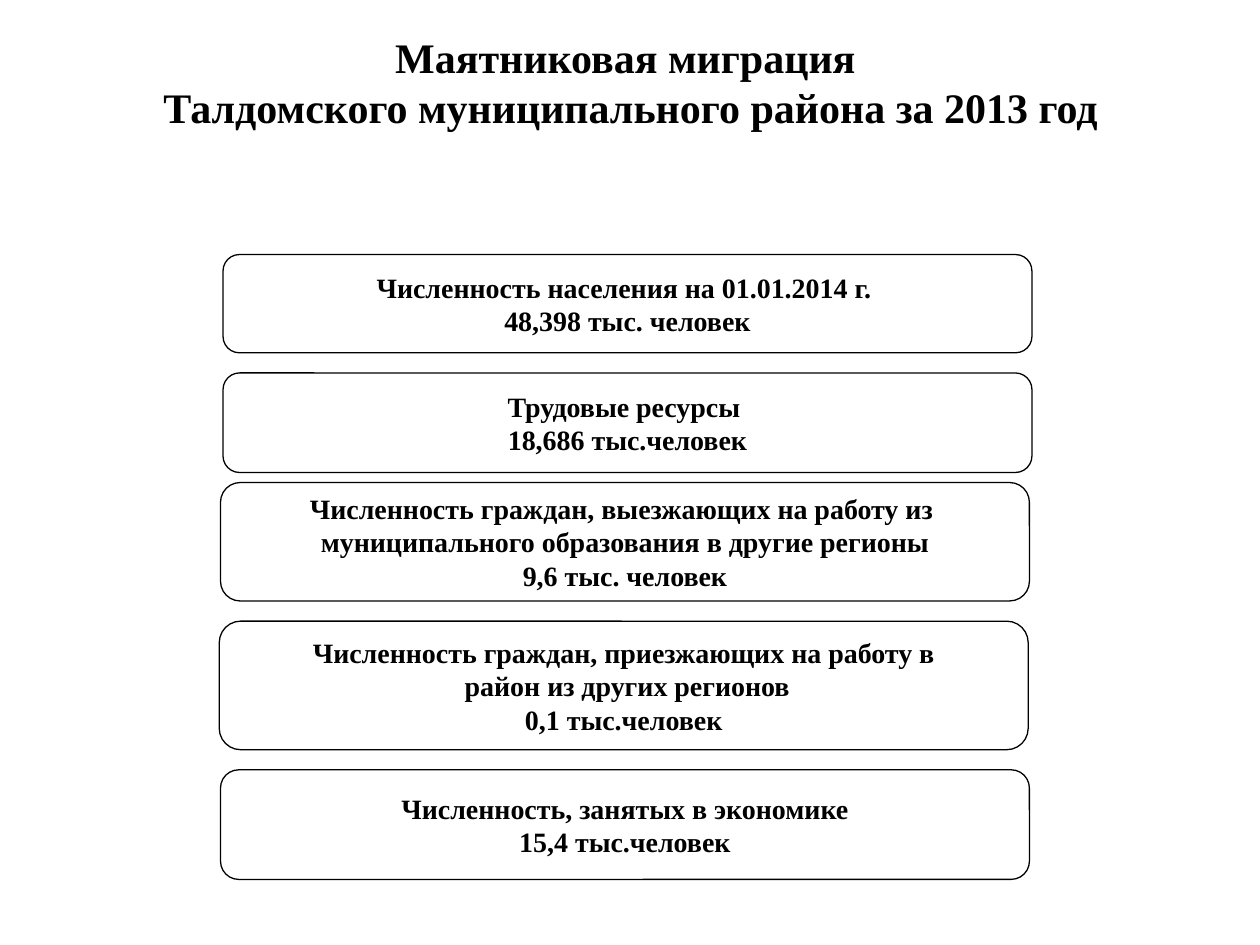
from pptx import Presentation
from pptx.dml.color import RGBColor
from pptx.enum.shapes import MSO_SHAPE as Shape
from pptx.enum.text import MSO_ANCHOR as Anchor, MSO_AUTO_SIZE as AutoSize, PP_ALIGN as Align
from pptx.util import Inches, Pt

TITLE = ["Маятниковая миграция ", "Талдомского муниципального района за 2013 год"]

# Left, top, height in inches, then the lines of each card
CARDS = [
    (1.77, 2.96, 0.79, ["Трудовые ресурсы ", "18,686 тыс.человек"]),
    (1.77, 2.02, 0.78, ["Численность населения на 01.01.2014 г. ",
                        "48,398 тыс. человек"]),
    (1.75, 3.83, 0.94, ["Численность граждан, выезжающих на работу из ",
                        "муниципального образования в другие регионы",
                        "9,6 тыс. человек"]),
    (1.74, 4.93, 1.02, ["Численность граждан, приезжающих на работу в",
                        " район из других регионов",
                        "0,1 тыс.человек"]),
    (1.75, 6.11, 0.87, ["Численность, занятых в экономике",
                        "15,4 тыс.человек"]),
]
CARD_WIDTH = 6.42


class Theme:
    font = "Times New Roman"
    ink = RGBColor(0, 0, 0)
    title_size = Pt(24)
    card_size = Pt(16)
    outline = Pt(0.75)


def write_lines(frame, lines, size):
    for index, line in enumerate(lines):
        para = frame.paragraphs[0] if index == 0 else frame.add_paragraph()
        para.alignment = Align.CENTER
        para.line_spacing = 1.0
        para.space_before = Pt(0)
        span = para.add_run()
        span.text = line
        span.font.name = Theme.font
        span.font.size = size
        span.font.bold = True
        span.font.color.rgb = Theme.ink


def add_card(page, left, top, height, lines):
    card = page.shapes.add_shape(Shape.ROUNDED_RECTANGLE, Inches(left), Inches(top),
                                 Inches(CARD_WIDTH), Inches(height))
    card.shadow.inherit = False
    card.fill.background()
    card.line.color.rgb = Theme.ink
    card.line.width = Theme.outline
    card.text_frame.word_wrap = False
    card.text_frame.vertical_anchor = Anchor.MIDDLE
    write_lines(card.text_frame, lines, Theme.card_size)


def main():
    deck = Presentation()
    deck.slide_width, deck.slide_height = Inches(10), Inches(7.5)
    page = deck.slides.add_slide(deck.slide_layouts[5])

    # Title
    title = page.shapes.title
    title.left, title.top = Inches(0.91), Inches(0.2)
    title.width, title.height = Inches(8.19), Inches(0.9)
    title.text_frame.word_wrap = True
    title.text_frame.auto_size = AutoSize.SHAPE_TO_FIT_TEXT
    title.text_frame.vertical_anchor = Anchor.TOP
    write_lines(title.text_frame, TITLE, Theme.title_size)

    # Cards
    for card in CARDS:
        add_card(page, *card)

    deck.save("out.pptx")


if __name__ == "__main__":
    main()
